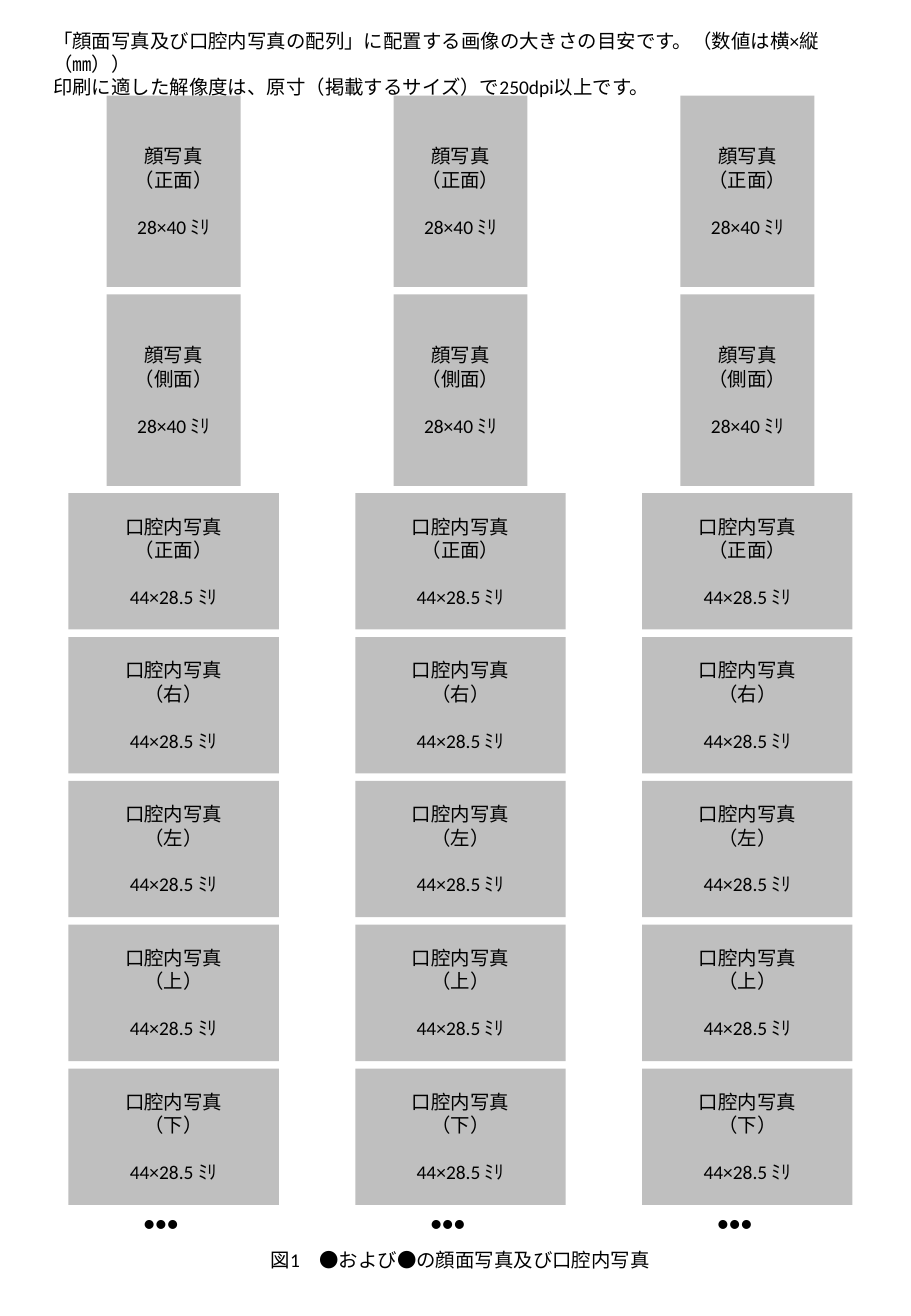
"""Draw the guide to photo sizes: three columns of face and mouth tiles."""
from typing import NamedTuple

from pptx import Presentation
from pptx.dml.color import RGBColor
from pptx.enum.shapes import MSO_SHAPE
from pptx.enum.text import MSO_ANCHOR, MSO_AUTO_SIZE, PP_ALIGN
from pptx.util import Pt

FONT, SIZE, LINE = "Calibri", 11.5, 14
INK, GRAY = "000000", "BFBFBF"
MIDDLE, PITCH, COLUMNS = 102.9, 170.05, 3
TOP, GAP = 56.6, 4.43


class Photo(NamedTuple):
    title: str
    width: float
    height: float
    label: str


class Tile(NamedTuple):
    photo: Photo
    view: str


class Box(NamedTuple):
    left: float
    top: float
    width: float
    height: float


FACE = Photo("顔写真", 79.4, 113.4, "28×40 ﾐﾘ")
MOUTH = Photo("口腔内写真", 124.7, 80.8, "44×28.5 ﾐﾘ")
TILES = [Tile(FACE, view) for view in ("正面", "側面")]
TILES += [Tile(MOUTH, view) for view in ("正面", "右", "左", "上", "下")]


def color(code: str) -> RGBColor:
    return RGBColor.from_string(code)


def place(box: Box) -> list[Pt]:
    return [Pt(value) for value in box]


def write(frame, lines: list[str], align: PP_ALIGN, wrap: bool) -> None:
    frame.word_wrap = wrap
    for index, line in enumerate(lines):
        para = frame.add_paragraph() if index else frame.paragraphs[0]
        para.text = line
        para.alignment = align
        para.font.name = FONT
        para.font.size = Pt(SIZE)
        para.font.color.rgb = color(INK)


def add_tile(slide, tile: Tile, middle: float, top: float) -> None:
    photo = tile.photo
    box = Box(middle - photo.width / 2, top, photo.width, photo.height)
    shape = slide.shapes.add_shape(MSO_SHAPE.RECTANGLE, *place(box))
    shape.shadow.inherit = False
    shape.fill.solid()
    shape.fill.fore_color.rgb = color(GRAY)
    shape.line.fill.background()
    frame = shape.text_frame
    frame.vertical_anchor = MSO_ANCHOR.MIDDLE
    lines = [photo.title, f"（{tile.view}）", photo.label]
    write(frame, lines, PP_ALIGN.CENTER, False)
    frame.paragraphs[-1].space_before = Pt(LINE)


def add_note(slide, box: Box, lines: list[str],
             align: PP_ALIGN = PP_ALIGN.LEFT, wrap: bool = False) -> None:
    frame = slide.shapes.add_textbox(*place(box)).text_frame
    write(frame, lines, align, wrap)
    frame.auto_size = MSO_AUTO_SIZE.SHAPE_TO_FIT_TEXT


def add_column(slide, middle: float) -> None:
    top = TOP
    for tile in TILES:
        add_tile(slide, tile, middle, top)
        top += tile.photo.height + GAP
    add_note(slide, Box(middle - 25, top - GAP, 49.7, 21), ["●●●"])


def main() -> None:
    deck = Presentation()
    deck.slide_width, deck.slide_height = Pt(540), Pt(779.76)
    slide = deck.slides.add_slide(deck.slide_layouts[6])
    for index in range(COLUMNS):
        add_column(slide, MIDDLE + index * PITCH)
    add_note(slide, Box(24.4, 13.6, 477.4, 35.3), [
        "「顔面写真及び口腔内写真の配列」に配置する画像の大きさの目安です。（数値は横×縦（㎜））",
        "印刷に適した解像度は、原寸（掲載するサイズ）で250dpi以上です。",
    ])
    add_note(slide, Box(40.3, 735.8, 465, 21),
             ["図1　●および●の顔面写真及び口腔内写真"], PP_ALIGN.CENTER, True)
    deck.save("out.pptx")


if __name__ == "__main__":
    main()
